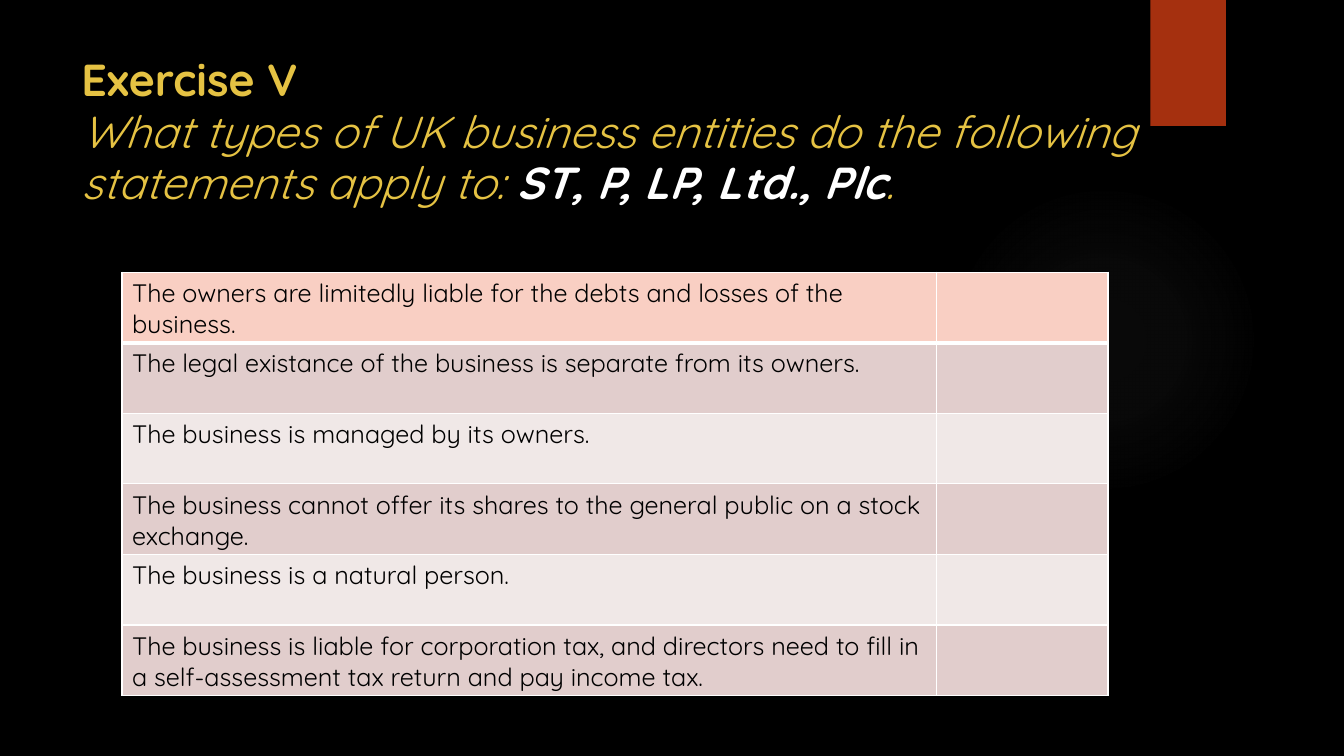
from lxml import etree
from pptx import Presentation
from pptx.dml.color import RGBColor
from pptx.enum.shapes import MSO_SHAPE
from pptx.enum.text import MSO_ANCHOR
from pptx.oxml import parse_xml
from pptx.oxml.ns import nsdecls, qn
from pptx.util import Emu, Pt

RECTANGLE = MSO_SHAPE.RECTANGLE
OVAL = MSO_SHAPE.OVAL
TOP = MSO_ANCHOR.TOP

PX = 9144  # 100 px to the inch
FONT = "Quicksand"
COLORS = {
    "background": "000000",
    "glow": "848484",
    "ribbon": "A5300F",
    "heading": "E5C243",
    "answers": "FFFFFF",
    "statement": "000000",
    "border": "FFFFFF",
    "first_row": "F9CFC3",
    "dark_row": "E1CDCC",
    "light_row": "F0E8E7",
}
GLOW_STOPS = [(0, 7), (36, 6), (69, 0)]  # position and opacity in percent

HEADING_RUNS = [  # text, colour, bold, italic
    ("What types of UK business entities do the following statements apply to: ",
     "heading", False, True),
    ("ST, P, LP, Ltd., Plc", "answers", True, True),
    (".", "heading", False, True),
]
STATEMENTS = [
    "The owners are limitedly liable for the debts and losses of the business.",
    "The legal existance of the business is separate from its owners.",
    "The business is managed by its owners.",
    "The business cannot offer its shares to the general public on a stock exchange.",
    "The business is a natural person.",
    "The business is liable for corporation tax, and directors need to fill in "
    "a self-assessment tax return and pay income tax.",
]
COLUMN_WIDTHS = [808, 170]
ROW_HEIGHT = 70


def px(*lengths):
    return [Emu(length * PX) for length in lengths]


def rgb(name):
    return RGBColor.from_string(COLORS[name])


def style_font(font, size, color, bold=False, italic=False):
    font.name = FONT
    font.size = Pt(size)
    font.color.rgb = rgb(color)
    font.bold = bold
    font.italic = italic


def add_plain_shape(slide, kind, box, color):
    shape = slide.shapes.add_shape(kind, *px(*box))
    shape.shadow.inherit = False
    shape.line.fill.background()
    shape.fill.solid()
    shape.fill.fore_color.rgb = rgb(color)
    return shape


def add_glow(slide, box):
    """Add a circle that fades out from its centre."""
    glow = add_plain_shape(slide, OVAL, box, "glow")
    stops = "".join(
        f'<a:gs pos="{position * 1000}"><a:srgbClr val="{COLORS["glow"]}">'
        f'<a:alpha val="{opacity * 1000}"/></a:srgbClr></a:gs>'
        for position, opacity in GLOW_STOPS)
    gradient = parse_xml(
        f'<a:gradFill {nsdecls("a")}><a:gsLst>{stops}</a:gsLst><a:path path="circle">'
        '<a:fillToRect l="50000" t="50000" r="50000" b="50000"/></a:path></a:gradFill>')
    properties = glow.element.spPr
    properties.replace(properties.find(qn("a:solidFill")), gradient)


def add_heading(slide, box):
    frame = slide.shapes.add_textbox(*px(*box)).text_frame
    frame.word_wrap = True
    frame.vertical_anchor = TOP
    paragraph = frame.paragraphs[0]
    paragraph.text = "Exercise V\v"
    paragraph.line_spacing = 0.96
    style_font(paragraph.font, 32, "heading", bold=True)
    style_font(paragraph.runs[0].font, 32, "heading", bold=True)
    for text, color, bold, italic in HEADING_RUNS:
        run = paragraph.add_run()
        run.text = text
        style_font(run.font, 32, color, bold, italic)


def set_borders(cell, top, bottom):
    """Draw all four cell borders; top and bottom are widths in points."""
    properties = cell._tc.get_or_add_tcPr()
    widths = {"lnL": 1, "lnR": 1, "lnT": top, "lnB": bottom}
    for index, (side, width) in enumerate(widths.items()):
        line = etree.Element(qn(f"a:{side}"), w=str(Pt(width)))
        fill = etree.SubElement(line, qn("a:solidFill"))
        etree.SubElement(fill, qn("a:srgbClr"), val=COLORS["border"])
        properties.insert(index, line)


def row_color(row):
    if row == 0:
        return "first_row"
    return "dark_row" if row % 2 else "light_row"


def add_statement_table(slide, left, top):
    size = sum(COLUMN_WIDTHS), ROW_HEIGHT * len(STATEMENTS)
    table = slide.shapes.add_table(
        len(STATEMENTS), len(COLUMN_WIDTHS), *px(left, top, *size)).table
    table.first_row = False
    table.horz_banding = False
    for column, width in zip(table.columns, px(*COLUMN_WIDTHS)):
        column.width = width
    for index, (row, statement) in enumerate(zip(table.rows, STATEMENTS)):
        row.height = Emu(ROW_HEIGHT * PX)
        for cell in row.cells:
            cell.fill.solid()
            cell.fill.fore_color.rgb = rgb(row_color(index))
            set_borders(cell, top=3 if index == 1 else 1, bottom=3 if index == 0 else 1)
        paragraph = row.cells[0].text_frame.paragraphs[0]
        paragraph.text = statement
        style_font(paragraph.runs[0].font, 18, "statement")


def main():
    presentation = Presentation()
    presentation.slide_width, presentation.slide_height = px(1333, 750)
    slide = presentation.slides.add_slide(presentation.slide_layouts[6])
    slide.background.fill.solid()
    slide.background.fill.fore_color.rgb = rgb("background")

    add_glow(slide, (941, 183, 308, 308))
    add_plain_shape(slide, RECTANGLE, (1141, 0, 75, 125), "ribbon")
    add_heading(slide, (71, 50, 1103, 153))
    add_statement_table(slide, 121, 270)

    presentation.save("out.pptx")


if __name__ == "__main__":
    main()
